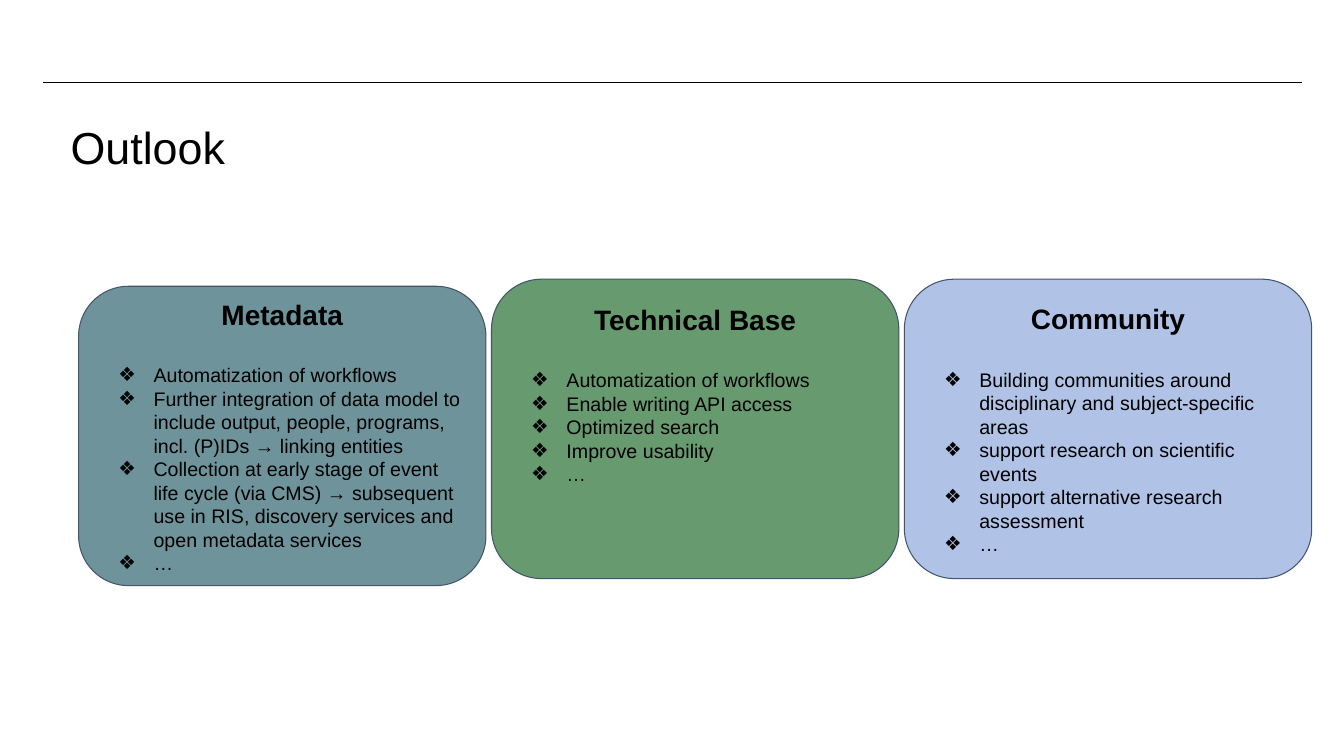
from dataclasses import dataclass

from lxml.etree import SubElement
from pptx import Presentation
from pptx.dml.color import RGBColor
from pptx.enum.shapes import MSO_CONNECTOR as Connector, MSO_SHAPE as Shape
from pptx.enum.text import MSO_ANCHOR as Anchor, PP_ALIGN as Align
from pptx.oxml.ns import qn
from pptx.util import Inches, Pt

FONT = "Arial"
BLACK = "000000"
BORDER = "44546A"
CARD_LEFT, CARD_STEP = 0.78, 4.095
CARD_WIDTH, CARD_HEIGHT = 4.04, 2.97


@dataclass
class Card:
    heading: str
    items: list[str]
    fill: str
    top: float = 2.77
    bottom_inset: float = 0
    opacity: int = 100


CARDS = [
    Card(
        "Metadata",
        [
            "Automatization of workflows",
            "Further integration of data model to include output, people, "
            "programs, incl. (P)IDs → linking entities",
            "Collection at early stage of event life cycle (via CMS) → subsequent "
            "use in RIS, discovery services and open metadata services",
            "…",
        ],
        "134F5C",
        top=2.84,
        opacity=61,
    ),
    Card(
        "Technical Base",
        [
            "Automatization of workflows",
            "Enable writing API access",
            "Optimized search",
            "Improve usability",
            "…",
        ],
        "679A6F",
        bottom_inset=0.69,
    ),
    Card(
        "Community",
        [
            "Building communities around disciplinary and subject-specific areas",
            "support research on scientific events",
            "support alternative research assessment",
            "…",
        ],
        "B0C2E5",
    ),
]


def color(value: str) -> RGBColor:
    return RGBColor.from_string(value)


def set_insets(frame, side: float, top: float, bottom: float) -> None:
    frame.margin_left = frame.margin_right = Inches(side)
    frame.margin_top, frame.margin_bottom = Inches(top), Inches(bottom)
    frame.vertical_anchor = Anchor.MIDDLE
    frame.word_wrap = True


def write(para, text: str, *, size: float, bold: bool = False,
          align=Align.LEFT, after: float = 0) -> None:
    para.alignment = align
    para.space_before, para.space_after = Pt(0), Pt(after)
    span = para.add_run()
    span.text = text
    span.font.name, span.font.size, span.font.bold = FONT, Pt(size), bold
    span.font.color.rgb = color(BLACK)


def indent(para, left: float, first: float, bullet: str = "") -> None:
    properties = para._p.get_or_add_pPr()
    properties.set("marL", str(Inches(left)))
    properties.set("indent", str(Inches(first)))
    if bullet:
        bullet_color = SubElement(properties, qn("a:buClr"))
        SubElement(bullet_color, qn("a:srgbClr"), val=BLACK)
        SubElement(properties, qn("a:buFont"), typeface=FONT)
        SubElement(properties, qn("a:buChar"), char=bullet)
    else:
        SubElement(properties, qn("a:buNone"))


def add_rule(page) -> None:
    rule = page.shapes.add_connector(
        Connector.STRAIGHT, Inches(0.43), Inches(0.82), Inches(12.91), Inches(0.82))
    rule.line.color.rgb = color(BLACK)
    rule.line.width = Pt(0.75)
    SubElement(rule._element.spPr, qn("a:effectLst"))


def add_title(page, text: str) -> None:
    title = page.shapes.title
    title.left, title.top = Inches(0.45), Inches(1.15)
    title.width, title.height = Inches(12.51), Inches(0.6)
    set_insets(title.text_frame, 0.13, 0.13, 0.13)
    para = title.text_frame.paragraphs[0]
    indent(para, 0.12, 0)
    write(para, text, size=32)


def add_card(page, card: Card, left: float) -> None:
    box = page.shapes.add_shape(
        Shape.ROUNDED_RECTANGLE, Inches(left), Inches(card.top),
        Inches(CARD_WIDTH), Inches(CARD_HEIGHT))
    box.shadow.inherit = False
    box.fill.solid()
    box.fill.fore_color.rgb = color(card.fill)
    if card.opacity < 100:
        fill_color = box._element.spPr.find(qn("a:solidFill"))[0]
        SubElement(fill_color, qn("a:alpha"), val=str(card.opacity * 1000))
    box.line.color.rgb = color(BORDER)
    box.line.width = Pt(0.75)

    frame = box.text_frame
    set_insets(frame, 0.1, 0, card.bottom_inset)
    write(frame.paragraphs[0], card.heading, size=20, bold=True,
          align=Align.CENTER, after=23)
    for item in card.items:
        para = frame.add_paragraph()
        indent(para, 0.5, -0.35, bullet="❖")
        write(para, item, size=14)


def main() -> None:
    deck = Presentation()
    deck.slide_width, deck.slide_height = Inches(13.33), Inches(7.5)
    page = deck.slides.add_slide(deck.slide_layouts.get_by_name("Title Only"))
    add_rule(page)
    add_title(page, "Outlook")
    for index, card in enumerate(CARDS):
        add_card(page, card, CARD_LEFT + index * CARD_STEP)
    deck.save("out.pptx")


if __name__ == "__main__":
    main()
